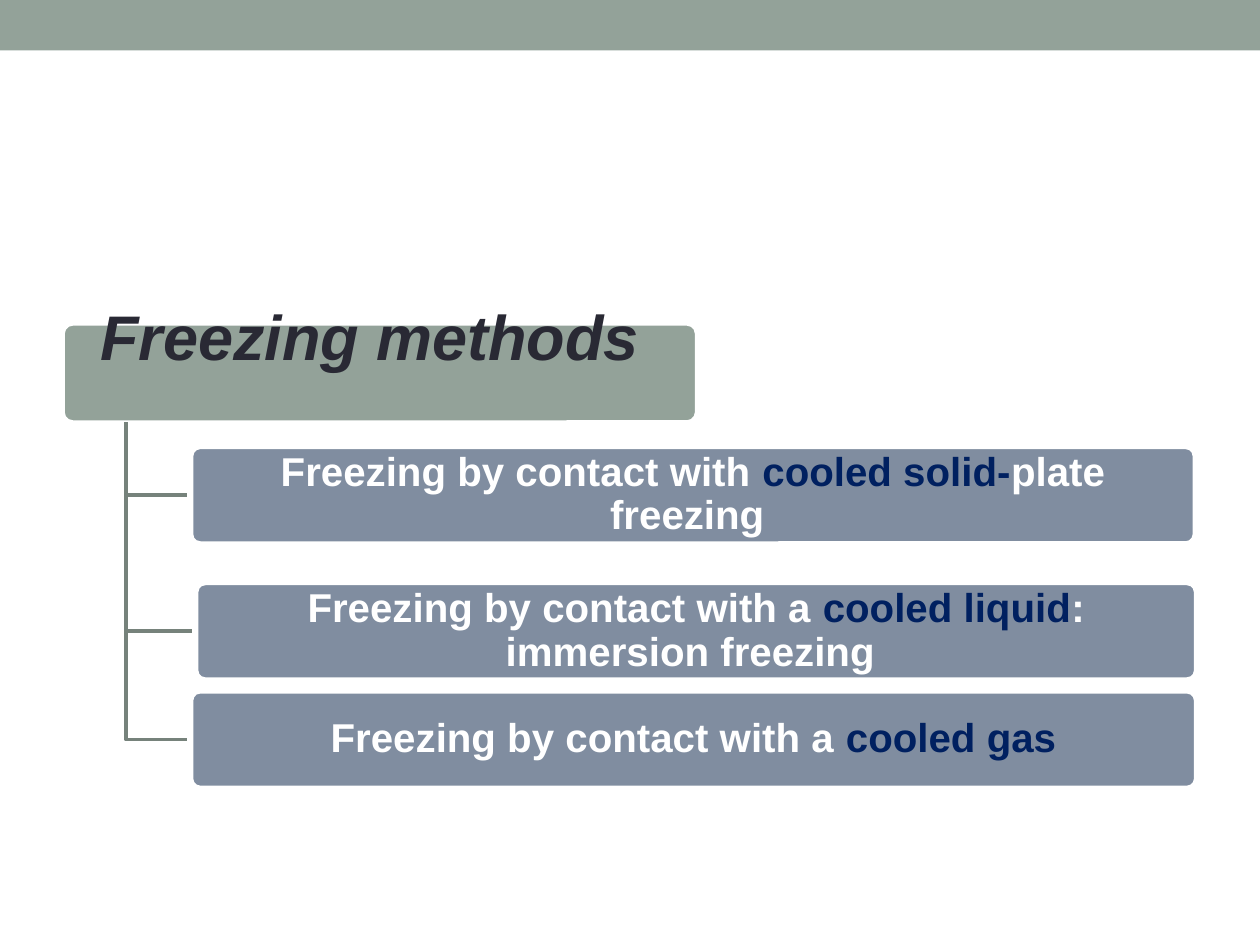
from dataclasses import dataclass

from pptx import Presentation
from pptx.dml.color import RGBColor
from pptx.enum.shapes import MSO_SHAPE
from pptx.enum.text import MSO_ANCHOR, PP_ALIGN
from pptx.shapes.autoshape import Shape
from pptx.slide import Slide
from pptx.util import Inches, Pt


@dataclass(frozen=True)
class Theme:
    sage: RGBColor = RGBColor(0x93, 0xA2, 0x99)
    slate: RGBColor = RGBColor(0x80, 0x8D, 0xA0)
    branch: RGBColor = RGBColor(0x76, 0x82, 0x7B)
    white: RGBColor = RGBColor(0xFF, 0xFF, 0xFF)
    ink: RGBColor = RGBColor(0x29, 0x29, 0x34)
    navy: RGBColor = RGBColor(0x00, 0x20, 0x60)
    font: str = "Arial"
    heading_size: float = 36
    method_size: float = 23
    thin: float = 2.08
    thick: float = 3.5


@dataclass(frozen=True)
class Phrase:
    text: str
    color: RGBColor
    italic: bool = False


@dataclass(frozen=True)
class Card:
    left: float
    top: float
    width: float
    phrases: tuple[Phrase, ...]


THEME = Theme()
CARD_HEIGHT = 0.78
TRUNK_X = 1.0

HEADING = Card(0.5, 2.57, 5.03,
               (Phrase("Freezing methods ", THEME.ink, italic=True),))
METHODS = (
    Card(1.51, 3.54, 7.98, (
        Phrase("Freezing by contact with ", THEME.white),
        Phrase("cooled solid-", THEME.navy),
        Phrase("plate freezing ", THEME.white))),
    Card(1.55, 4.62, 7.95, (
        Phrase("Freezing by contact with a ", THEME.white),
        Phrase("cooled liquid", THEME.navy),
        Phrase(": immersion freezing ", THEME.white))),
    Card(1.51, 5.48, 7.99, (
        Phrase("Freezing by contact with a ", THEME.white),
        Phrase("cooled gas", THEME.navy))),
)


def draw_band(slide: Slide) -> None:
    band = slide.shapes.add_shape(MSO_SHAPE.RECTANGLE, 0, 0, Inches(10), Inches(0.4))
    band.shadow.inherit = False
    band.fill.solid()
    band.fill.fore_color.rgb = THEME.sage
    band.line.fill.background()


def draw_card(slide: Slide, card: Card, fill: RGBColor, border: float,
              size: float) -> Shape:
    box = slide.shapes.add_shape(
        MSO_SHAPE.ROUNDED_RECTANGLE, Inches(card.left), Inches(card.top),
        Inches(card.width), Inches(CARD_HEIGHT))
    box.adjustments[0] = 0.1
    box.shadow.inherit = False
    box.fill.solid()
    box.fill.fore_color.rgb = fill
    box.line.color.rgb = THEME.white
    box.line.width = Pt(border)

    frame = box.text_frame
    frame.word_wrap = True
    frame.vertical_anchor = MSO_ANCHOR.MIDDLE
    frame.margin_left = frame.margin_right = Inches(0.05)
    frame.margin_top = frame.margin_bottom = Inches(0.03)
    paragraph = frame.paragraphs[0]
    paragraph.alignment = PP_ALIGN.CENTER
    paragraph.line_spacing = 0.9
    for phrase in card.phrases:
        run = paragraph.add_run()
        run.text = phrase.text
        run.font.name = THEME.font
        run.font.size = Pt(size)
        run.font.bold = True
        run.font.italic = phrase.italic
        run.font.color.rgb = phrase.color
    return box


def draw_branch(slide: Slide, card: Card) -> None:
    start_y = HEADING.top + CARD_HEIGHT
    middle_y = card.top + CARD_HEIGHT / 2
    builder = slide.shapes.build_freeform(Inches(TRUNK_X), Inches(start_y))
    builder.add_line_segments(
        [(Inches(TRUNK_X), Inches(middle_y)),
         (Inches(card.left), Inches(middle_y))], close=False)
    branch = builder.convert_to_shape()
    branch.shadow.inherit = False
    branch.fill.background()
    branch.line.color.rgb = THEME.branch
    branch.line.width = Pt(THEME.thin)


def main() -> None:
    deck = Presentation()
    deck.slide_width, deck.slide_height = Inches(10), Inches(7.5)
    slide = deck.slides.add_slide(deck.slide_layouts[6])

    # Top band
    draw_band(slide)

    # Heading, its text raised above the middle of the card
    heading = draw_card(slide, HEADING, THEME.sage, THEME.thin, THEME.heading_size)
    heading.text_frame.margin_bottom = Inches(0.55)
    heading.text_frame.margin_right = Inches(0.07)

    # Methods hanging from the trunk
    for method in METHODS:
        draw_branch(slide, method)
        draw_card(slide, method, THEME.slate, THEME.thick, THEME.method_size)

    deck.save("out.pptx")


if __name__ == "__main__":
    main()
